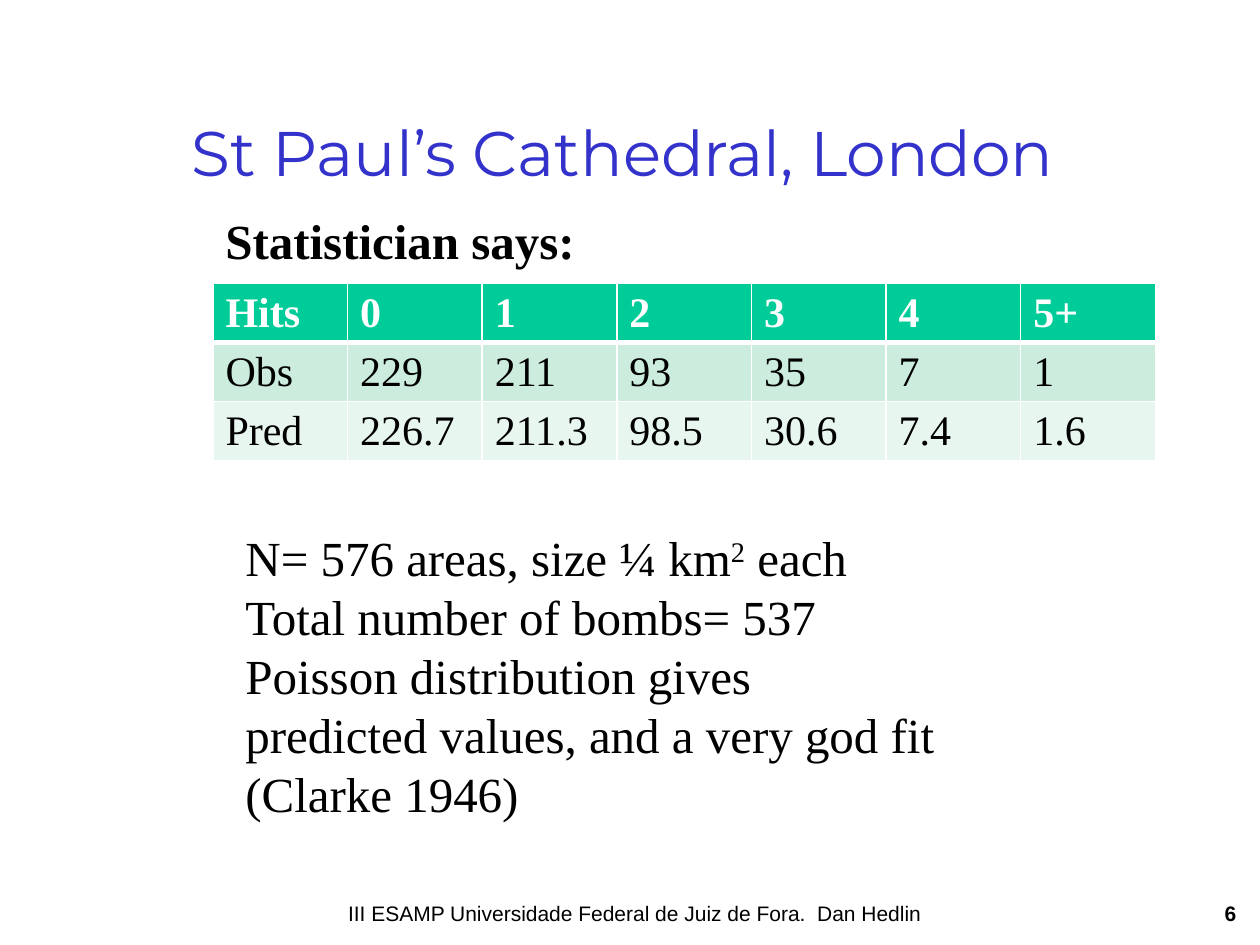
from lxml import etree
from pptx import Presentation
from pptx import util as u
from pptx.dml import color
from pptx.enum import text
from pptx.oxml import ns

SERIF = "Times New Roman"
HITS = [
    ["Hits", "0", "1", "2", "3", "4", "5+"],
    ["Obs", "229", "211", "93", "35", "7", "1"],
    ["Pred", "226.7", "211.3", "98.5", "30.6", "7.4", "1.6"],
]
ROW_FILLS = ["00CC99", "CCECDE", "E7F6EF"]
FACTS = [
    [("N= 576 areas, size ¼ km", False), ("2", True), (" each", False)],
    [("Total number of bombs= 537", False)],
    [("Poisson distribution gives predicted values, "
      "and a very god fit (Clarke 1946)", False)],
]


def rgb(value):
    return color.RGBColor.from_string(value)


def place(shape, left, top, width, height):
    shape.left, shape.top = u.Inches(left), u.Inches(top)
    shape.width, shape.height = u.Inches(width), u.Inches(height)


def add_run(paragraph, words, size, font=SERIF, fill="000000", bold=False, raised=False):
    run = paragraph.add_run()
    run.text = words
    run.font.size = u.Pt(size)
    run.font.name = font
    run.font.bold = bold
    run.font.color.rgb = rgb(fill)
    if raised:
        run.font._element.set("baseline", "30000")


def add_text_box(slide, box, wrap=True, anchor=text.MSO_ANCHOR.TOP):
    frame = slide.shapes.add_textbox(*map(u.Inches, box)).text_frame
    frame.word_wrap = wrap
    frame.vertical_anchor = anchor
    return frame


def add_title(slide, words):
    title = slide.shapes.title
    place(title, 1.42, 0.58, 8.5, 1.25)
    title.text_frame.vertical_anchor = text.MSO_ANCHOR.MIDDLE
    paragraph = title.text_frame.paragraphs[0]
    paragraph.alignment = text.PP_ALIGN.LEFT
    add_run(paragraph, words, 36, "Montserrat", "3333CC")


def add_facts(slide):
    frame = add_text_box(slide, (1.85, 4.14, 5.67, 2.46))
    for index, runs in enumerate(FACTS):
        paragraph = frame.add_paragraph() if index else frame.paragraphs[0]
        for words, raised in runs:
            add_run(paragraph, words, 28, raised=raised)


def add_footer(slide, words, box, alignment, bold=False):
    frame = add_text_box(slide, box, False, text.MSO_ANCHOR.MIDDLE)
    paragraph = frame.paragraphs[0]
    paragraph.alignment = alignment
    add_run(paragraph, words, 12, "Arial", bold=bold)


def set_borders(cell, widths):
    properties = cell._tc.get_or_add_tcPr()
    for index, (side, width) in enumerate(widths.items()):
        line = etree.Element(ns.qn(f"a:ln{side}"), w=str(u.Pt(width)))
        fill = etree.SubElement(line, ns.qn("a:solidFill"))
        etree.SubElement(fill, ns.qn("a:srgbClr"), val="FFFFFF")
        properties.insert(index, line)


def add_hits_table(slide):
    table = slide.shapes.add_table(
        len(HITS), len(HITS[0]), u.Inches(1.69), u.Inches(2.25),
        u.Inches(7.48), u.Inches(1.23)).table
    for column in table.columns:
        column.width = u.Inches(7.48 / len(HITS[0]))
    for row_index, values in enumerate(HITS):
        header = row_index == 0
        table.rows[row_index].height = u.Inches(0.41)
        widths = {"L": 1, "R": 1, "T": 3 if row_index == 1 else 1, "B": 3 if header else 1}
        for column_index, value in enumerate(values):
            cell = table.cell(row_index, column_index)
            cell.fill.solid()
            cell.fill.fore_color.rgb = rgb(ROW_FILLS[row_index])
            set_borders(cell, widths)
            add_run(cell.text_frame.paragraphs[0], value, 24,
                    fill="FFFFFF" if header else "000000", bold=header)


def main():
    presentation = Presentation()
    presentation.slide_width, presentation.slide_height = u.Inches(10), u.Inches(7.5)
    slide = presentation.slides.add_slide(presentation.slide_layouts[5])
    add_title(slide, "St Paul’s Cathedral, London")
    add_hits_table(slide)
    add_facts(slide)
    heading = add_text_box(slide, (1.69, 1.62, 3.39, 0.57))
    add_run(heading.paragraphs[0], "Statistician says:", 28, bold=True)
    add_footer(slide, "6", (7.83, 7, 2.08, 0.5), text.PP_ALIGN.RIGHT, True)
    add_footer(slide, "III ESAMP Universidade Federal de Juiz de Fora.  Dan Hedlin",
               (2.33, 7, 5.42, 0.5), text.PP_ALIGN.CENTER)
    presentation.save("out.pptx")


if __name__ == "__main__":
    main()
